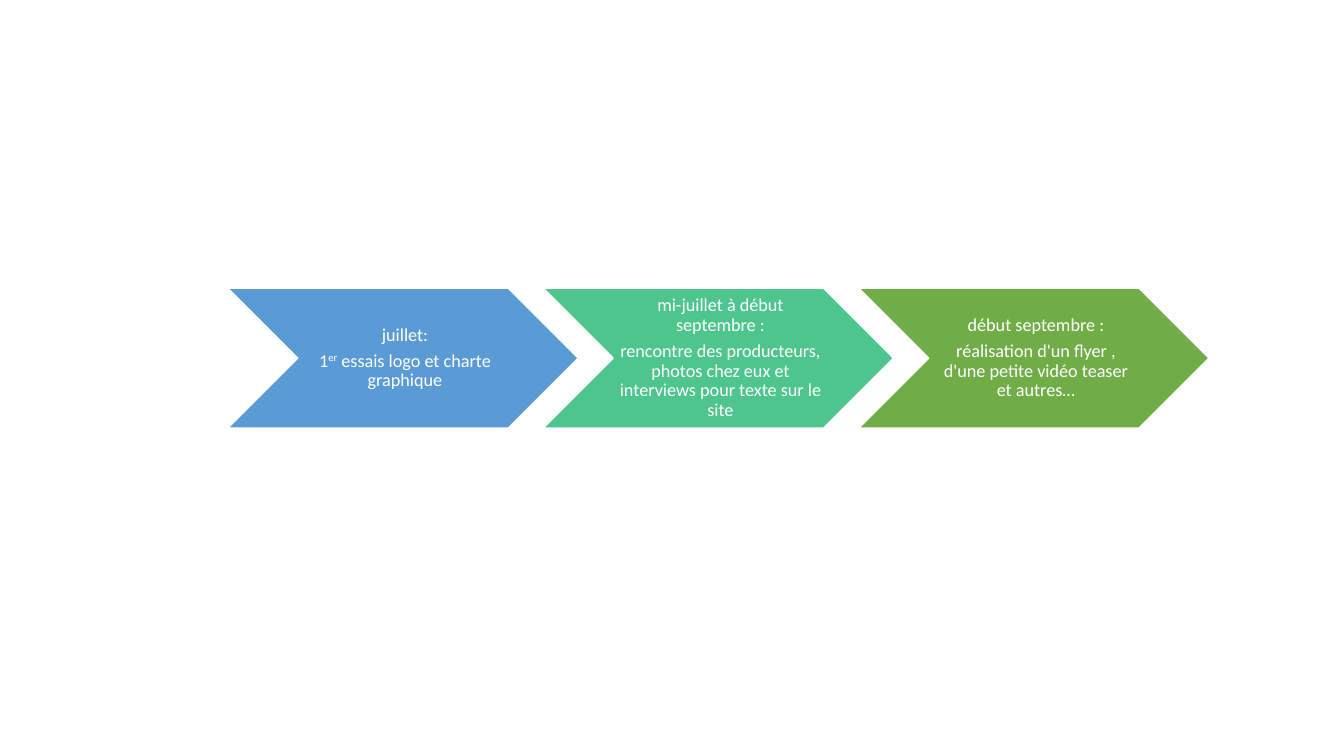
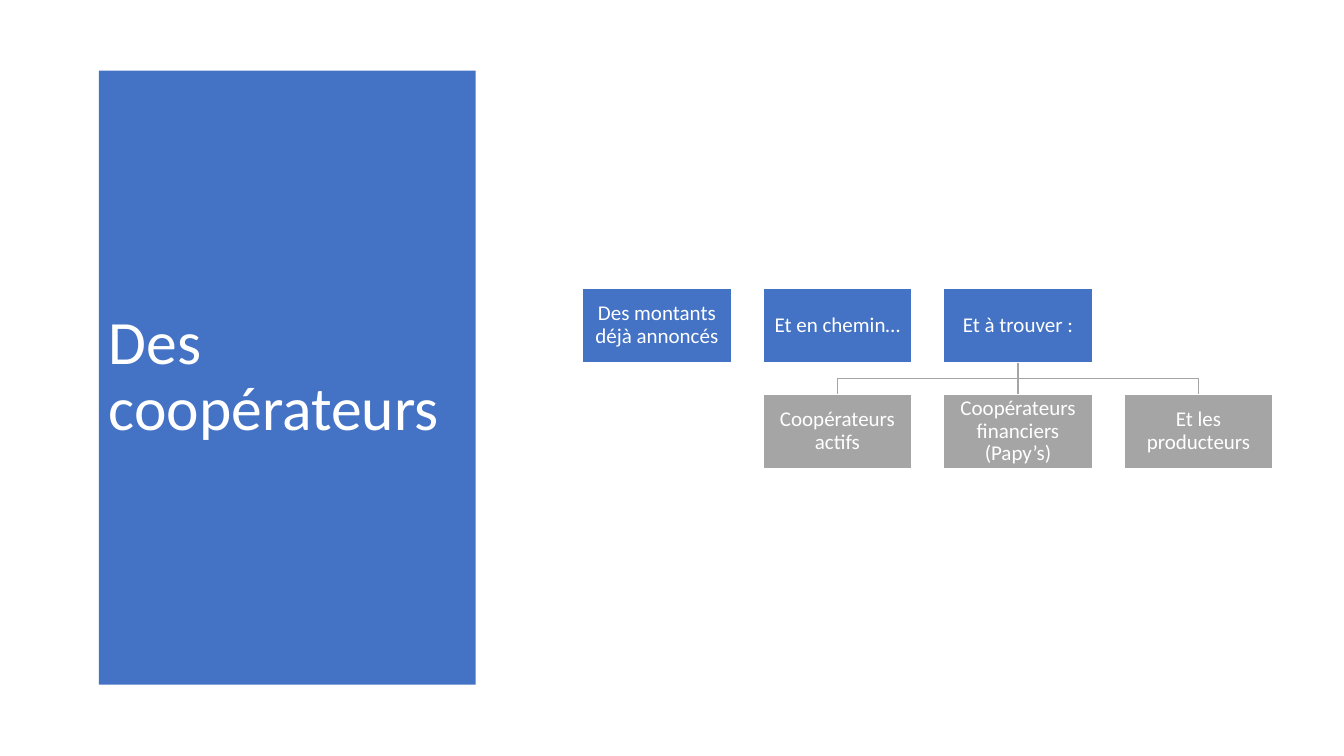
from dataclasses import dataclass

from lxml import etree
from pptx import Presentation
from pptx.dml.color import RGBColor
from pptx.enum.shapes import MSO_CONNECTOR, MSO_SHAPE
from pptx.enum.text import MSO_ANCHOR, MSO_AUTO_SIZE, PP_ALIGN
from pptx.oxml.ns import qn
from pptx.util import Cm, Pt


@dataclass(frozen=True)
class Theme:
    font: str = "Calibri"
    white: RGBColor = RGBColor(0xFF, 0xFF, 0xFF)
    blue: RGBColor = RGBColor(0x44, 0x72, 0xC4)
    sky: RGBColor = RGBColor(0x5B, 0x9B, 0xD5)
    mint: RGBColor = RGBColor(0x4D, 0xC5, 0x8D)
    green: RGBColor = RGBColor(0x70, 0xAD, 0x47)
    grey: RGBColor = RGBColor(0xA5, 0xA5, 0xA5)
    title_size: int = 44
    step_size: int = 13
    box_size: int = 15
    line_width: int = 1


theme = Theme()


def write(shape, lines, size, align, insets):
    """Write one paragraph per line; text between ^ marks is superscript."""
    frame = shape.text_frame
    frame.word_wrap = True
    frame.auto_size = MSO_AUTO_SIZE.NONE
    frame.vertical_anchor = MSO_ANCHOR.MIDDLE
    frame.margin_left, frame.margin_top, frame.margin_right, frame.margin_bottom = map(Cm, insets)
    for index, line in enumerate(lines):
        para = frame.paragraphs[0] if index == 0 else frame.add_paragraph()
        para.alignment = align
        para.line_spacing = 0.9
        para.space_before = Pt(0)
        if align == PP_ALIGN.CENTER:
            para.space_after = Pt(size * 0.35)
        for position, part in enumerate(line.split("^")):
            span = para.add_run()
            span.text = part
            if position % 2:
                span.font._element.set("baseline", "30000")
        para.font.name = theme.font
        para.font.size = Pt(size)
        para.font.color.rgb = theme.white


def add_block(page, kind, place, colour, lines, size, insets):
    """Add a filled shape with a white outline and centred text."""
    block = page.shapes.add_shape(kind, *map(Cm, place))
    block.shadow.inherit = False
    block.fill.solid()
    block.fill.fore_color.rgb = colour
    block.line.color.rgb = theme.white
    block.line.width = Pt(theme.line_width)
    write(block, lines, size, PP_ALIGN.CENTER, insets)
    return block


deck = Presentation()
deck.slide_width, deck.slide_height = Cm(33.87), Cm(19.05)
title_only, blank = deck.slide_layouts[5], deck.slide_layouts[6]
diagram_top = 7.26

# Slide 1: timeline of chevrons
page = deck.slides.add_slide(blank)
steps = [
    (theme.sky, ["juillet:", "1^er^ essais logo et charte graphique"]),
    (theme.mint, ["mi-juillet à début septembre :",
                  "rencontre des producteurs, photos chez eux et interviews pour texte sur le site"]),
    (theme.green, ["début septembre :", "réalisation d'un flyer , d'une petite vidéo teaser et autres…"]),
]
for index, (colour, lines) in enumerate(steps):
    place = (5.74 + index * 7.95, diagram_top, 8.83, 3.53)
    add_block(page, MSO_SHAPE.CHEVRON, place, colour, lines, theme.step_size, (0.15, 0.05, 0.05, 0.05))

# Slide 2: title panel
page = deck.slides.add_slide(title_only)
title = page.shapes.title
title.left, title.top, title.width, title.height = Cm(2.49), Cm(1.78), Cm(9.5), Cm(15.47)
title.fill.solid()
title.fill.fore_color.rgb = theme.blue
write(title, ["Des coopérateurs"], theme.title_size, PP_ALIGN.LEFT, (0.25, 0.13, 0.25, 0.13))

# Slide 2: two rows of boxes, as (first column, colour, labels)
rows = [
    (0, theme.blue, ["Des montants déjà annoncés", "Et en chemin…", "Et à trouver :"]),
    (1, theme.grey, ["Coopérateurs actifs", "Coopérateurs financiers (Papy’s)", "Et les producteurs"]),
]
boxes = []
for row, (first_column, colour, labels) in enumerate(rows):
    for column, label in enumerate(labels, first_column):
        place = (14.68 + column * 4.55, diagram_top + row * 2.67, 3.75, 1.88)
        boxes.append(add_block(page, MSO_SHAPE.RECTANGLE, place, colour, [label], theme.box_size, (0.03,) * 4))

# Slide 2: branches from the last top box to the lower row
parent, children = boxes[2], boxes[3:]
start_x, start_y = parent.left + parent.width // 2, parent.top + parent.height
for child in children:
    end_x, end_y = child.left + child.width // 2, child.top
    if child.left == parent.left:
        branch = page.shapes.add_connector(MSO_CONNECTOR.STRAIGHT, start_x, start_y, end_x, end_y)
        branch.begin_connect(parent, 2)
        branch.end_connect(child, 0)
        etree.SubElement(branch._element.spPr, qn("a:effectLst"))
    else:
        middle_y = (start_y + end_y) // 2
        outline = page.shapes.build_freeform(start_x, start_y)
        outline.add_line_segments([(start_x, middle_y), (end_x, middle_y), (end_x, end_y)], close=False)
        branch = outline.convert_to_shape()
        branch.shadow.inherit = False
        branch.fill.background()
    branch.line.color.rgb = theme.grey
    branch.line.width = Pt(theme.line_width)

deck.save("out.pptx")
